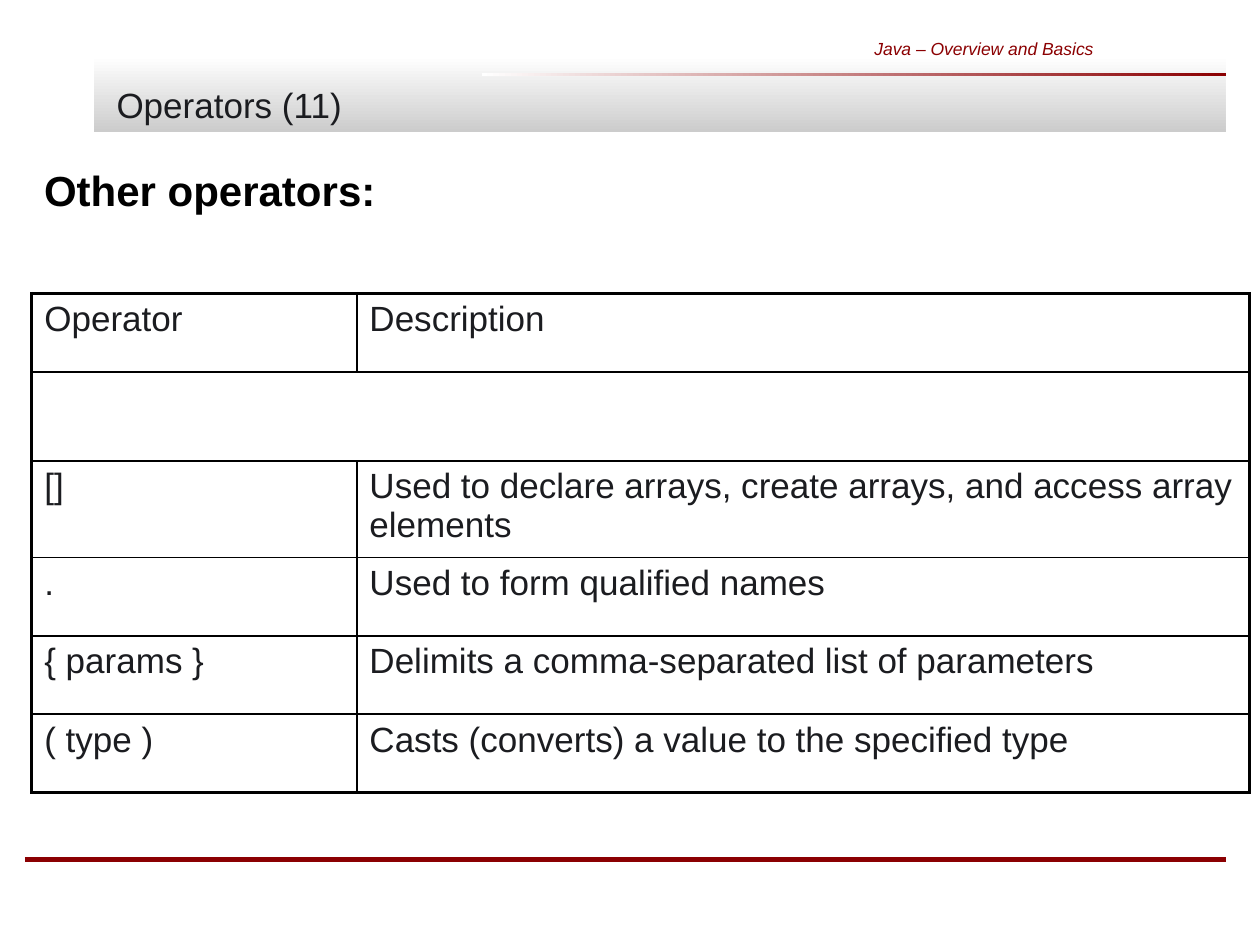
import pptx
import pptx.dml.color
import pptx.enum.shapes
import pptx.enum.text
import pptx.oxml
import pptx.oxml.ns
import pptx.util
from pptx.util import Cm

RGBColor = pptx.dml.color.RGBColor
WHITE = RGBColor(0xFF, 0xFF, 0xFF)
SILVER = RGBColor(0xCC, 0xCC, 0xCC)
DARK_RED = RGBColor(0x8B, 0x00, 0x02)
INK = RGBColor(0x1B, 0x1C, 0x20)
BLACK = RGBColor(0x00, 0x00, 0x00)

ANCHOR = pptx.enum.text.MSO_ANCHOR
NAMESPACE = pptx.oxml.ns.nsdecls("a")
THIN, THICK = 1, 2.25

OPERATORS = [
    ("Operator", "Description"),
    None,  # blank row across both columns
    ("[]", "Used to declare arrays, create arrays, and access array elements"),
    (".", "Used to form qualified names"),
    ("{ params }", "Delimits a comma-separated list of parameters"),
    ("( type )", "Casts (converts) a value to the specified type"),
]
ROW_SHARES = [1.58, 1.79, 1.93, 1.58, 1.58, 1.58]
OPERATOR_COLUMN_SHARE = 0.267


def style_paragraph(paragraph, size, color, bold=False, italic=False):
    font = paragraph.font
    font.name = "Arial"
    font.size = pptx.util.Pt(size)
    font.bold = bold
    font.italic = italic
    font.color.rgb = color


def add_text(slide, box, text, size, color, anchor=ANCHOR.TOP, **emphasis):
    frame = slide.shapes.add_textbox(*box).text_frame
    frame.word_wrap = True
    frame.vertical_anchor = anchor
    paragraph = frame.paragraphs[0]
    paragraph.text = text
    style_paragraph(paragraph, size, color, **emphasis)
    return paragraph


def add_gradient_bar(slide, box, end_color, angle):
    bar = slide.shapes.add_shape(pptx.enum.shapes.MSO_SHAPE.RECTANGLE, *box)
    bar.shadow.inherit = False
    bar.line.fill.background()
    bar.fill.gradient()
    bar.fill.gradient_angle = angle
    for stop, color in zip(bar.fill.gradient_stops, (WHITE, end_color)):
        stop.color.rgb = color


def add_header(slide, left, top, width, height):
    # Title band
    add_gradient_bar(slide, (left, top, width, height), SILVER, 270)
    # Red rule fading in from the left
    rule_width = Cm(15)
    add_gradient_bar(
        slide,
        (left + width - rule_width, top + Cm(0.35), rule_width, Cm(0.06)),
        DARK_RED, 0)
    # Course name
    course = add_text(
        slide, (left + Cm(13), top - Cm(0.64), Cm(7.39), Cm(0.99)),
        "Java – Overview and Basics", 10, DARK_RED, ANCHOR.MIDDLE, italic=True)
    course.alignment = pptx.enum.text.PP_ALIGN.RIGHT
    # Title with a light text shadow
    title = add_text(
        slide, (left + Cm(0.2), top - Cm(0.58), Cm(23.29), Cm(2.11)),
        "Operators (11)", 20, INK, ANCHOR.BOTTOM)
    title.runs[0].font._element.append(pptx.oxml.parse_xml(
        f'<a:effectLst {NAMESPACE}><a:outerShdw dist="38100" dir="2700000">'
        f'<a:srgbClr val="{WHITE}"/></a:outerShdw></a:effectLst>'))


def set_borders(cell, widths):
    properties = cell._tc.get_or_add_tcPr()
    for position, (side, width) in enumerate(widths.items()):
        properties.insert(position, pptx.oxml.parse_xml(
            f'<a:ln{side} {NAMESPACE} w="{pptx.util.Pt(width)}">'
            f'<a:solidFill><a:srgbClr val="{BLACK}"/></a:solidFill>'
            f'</a:ln{side}>'))


def add_operator_table(slide, left, top, width, height):
    last_row = len(OPERATORS) - 1
    table = slide.shapes.add_table(
        len(OPERATORS), 2, left, top, width, height).table
    table.first_row = False
    table.horz_banding = False
    table.columns[0].width = int(width * OPERATOR_COLUMN_SHARE)
    table.columns[1].width = width - table.columns[0].width

    for row, texts in enumerate(OPERATORS):
        table.rows[row].height = int(height * ROW_SHARES[row] / sum(ROW_SHARES))
        for column in range(2):
            cell = table.cell(row, column)
            cell.fill.background()
            # Thick frame outside, thin grid inside
            set_borders(cell, {
                "L": THICK if column == 0 else THIN,
                "R": THICK if column == 1 or texts is None else THIN,
                "T": THICK if row == 0 else THIN,
                "B": THICK if row == last_row else THIN,
            })
            if texts:
                cell.text = texts[column]
                style_paragraph(cell.text_frame.paragraphs[0], 20, INK)
        if texts is None:
            table.cell(row, 0).merge(table.cell(row, 1))


def add_body(slide, left, top, width, height):
    # Heading
    add_text(slide, (left, top, width, Cm(1.4)),
             "Other operators:", 24, BLACK, bold=True)
    # Operator table
    table_offset = Cm(2.72)
    add_operator_table(slide, left, top + table_offset,
                       width, height - table_offset)


def add_footer_rule(slide, left, top, width):
    rule = slide.shapes.add_connector(
        pptx.enum.shapes.MSO_CONNECTOR.STRAIGHT, left, top, left + width, top)
    rule.line.color.rgb = DARK_RED
    rule.line.width = pptx.util.Pt(3)
    rule._element.spPr.append(
        pptx.oxml.parse_xml(f"<a:effectLst {NAMESPACE}/>"))


def main():
    presentation = pptx.Presentation()
    presentation.slide_width = Cm(25.4)
    presentation.slide_height = Cm(19.05)
    slide = presentation.slides.add_slide(presentation.slide_layouts[6])
    add_header(slide, Cm(1.9), Cm(1.12), Cm(22.81), Cm(1.55))
    add_footer_rule(slide, Cm(0.5), Cm(17.32), Cm(24.21))
    add_body(slide, Cm(0.64), Cm(3.2), Cm(24.55), Cm(12.76))
    presentation.save("out.pptx")


if __name__ == "__main__":
    main()
